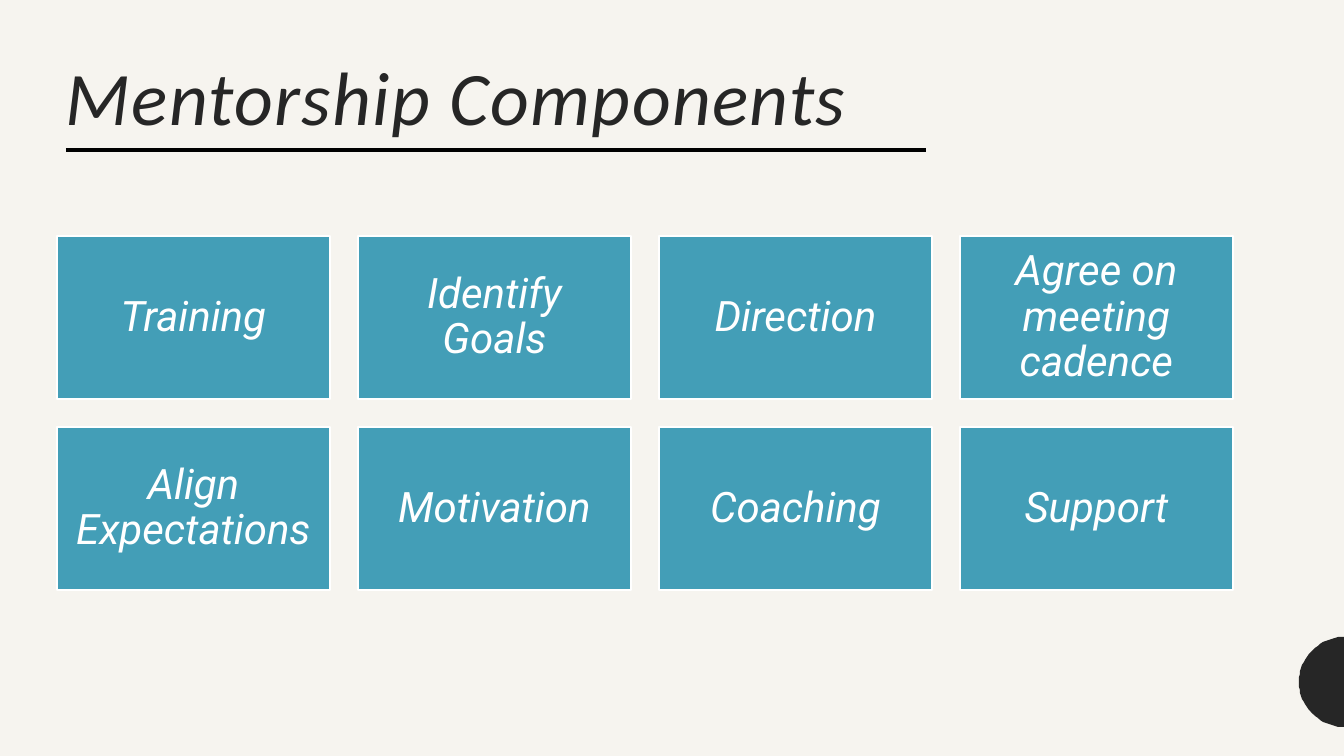
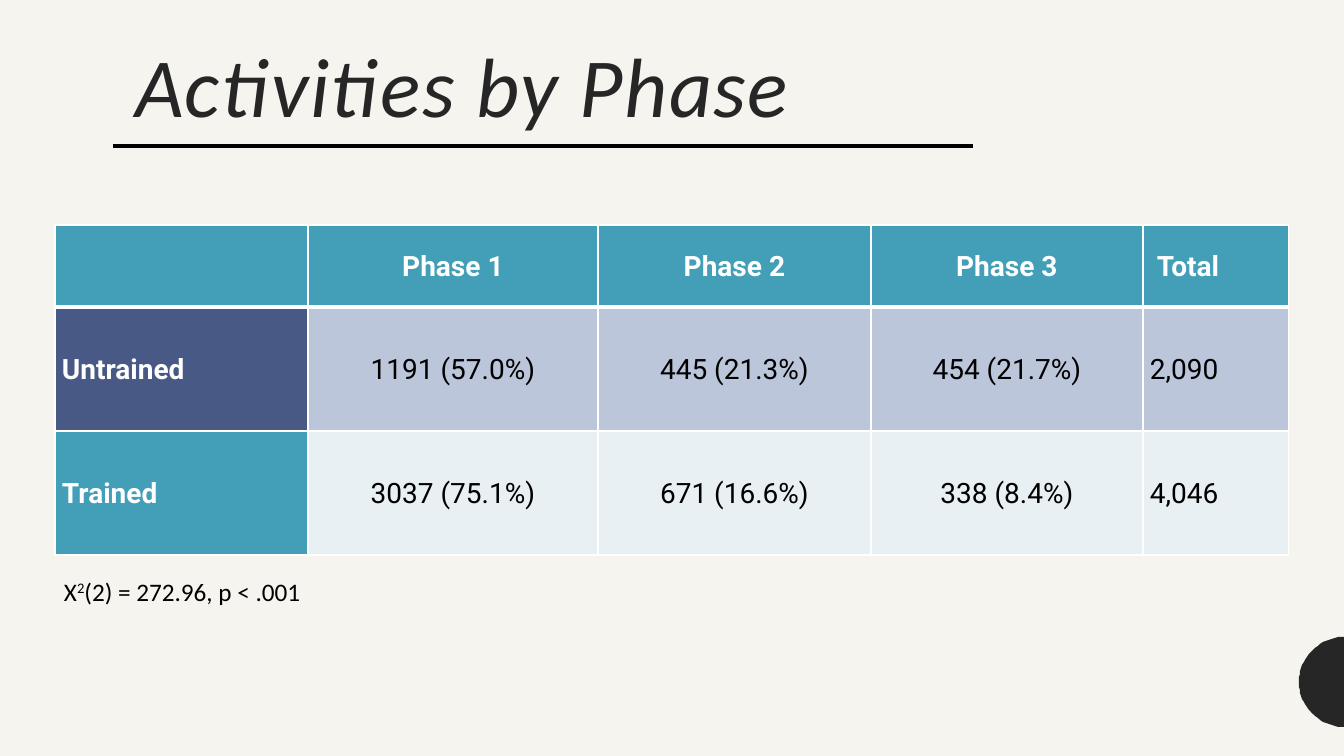
import math

from lxml import etree
from pptx import Presentation
from pptx import util as u
from pptx.dml.color import RGBColor
from pptx.enum import shapes, text
from pptx.oxml.ns import qn

PX = 914400 / 100.8
TEAL, NAVY, INK, WHITE, BLACK = "439EB7", "475984", "262626", "FFFFFF", "000000"
PALE_BLUE, PALE_TEAL, PAPER = "BCC6DB", "E9F0F3", "F6F4EF"
SIDES = ("lnL", "lnR", "lnT", "lnB")


def px(*lengths):
    return [u.Emu(round(length * PX)) for length in lengths]


def style(paragraph, size, name, color, align=text.PP_ALIGN.LEFT, spacing=0.9, bold=False, italic=False):
    paragraph.alignment = align
    paragraph.line_spacing = spacing
    for run in paragraph.runs:
        run.font.size, run.font.name = u.Pt(size), name
        run.font.bold, run.font.italic = bold, italic
        run.font.color.rgb = RGBColor.from_string(color)


presentation = Presentation()
presentation.slide_width, presentation.slide_height = px(1344, 756)
background = presentation.slide_master.background.fill
background.solid()
background.fore_color.rgb = RGBColor.from_string(PAPER)

# Shared frame: half circle, title and rule
# heading, size, title box, anchor, rule start and height
frames = [
    ("Mentorship Components", 54, (56, 56, 1176, 94), text.MSO_ANCHOR.MIDDLE, 66, 150),
    ("Activities by Phase", 60, (125, 34, 1134, 112), text.MSO_ANCHOR.BOTTOM, 113, 146),
]
RULE_WIDTH = 860
RADIUS, CENTER_Y = 45, 682
arc = [(1344 - RADIUS * math.sin(math.radians(a)), CENTER_Y - RADIUS * math.cos(math.radians(a)))
       for a in range(0, 181, 4)]

for heading, size, box, anchor, rule_left, rule_top in frames:
    slide = presentation.slides.add_slide(presentation.slide_layouts[5])
    builder = slide.shapes.build_freeform(*arc[0], scale=PX)
    builder.add_line_segments(arc[1:], close=True)
    half_circle = builder.convert_to_shape()
    half_circle.shadow.inherit = False
    half_circle.fill.solid()
    half_circle.fill.fore_color.rgb = RGBColor.from_string(INK)
    half_circle.line.fill.background()

    title = slide.shapes.title
    title.left, title.top, title.width, title.height = px(*box)
    frame = title.text_frame
    frame.text = heading
    frame.auto_size = text.MSO_AUTO_SIZE.NONE
    frame.vertical_anchor = anchor
    frame.margin_left = frame.margin_right = frame.margin_bottom = px(10)[0]
    style(frame.paragraphs[0], size, "Calibri", INK, italic=True)
    frame.paragraphs[0].runs[0]._r.get_or_add_rPr().set("spc", "100")

    rule = slide.shapes.add_connector(
        shapes.MSO_CONNECTOR.STRAIGHT, *px(rule_left, rule_top, rule_left + RULE_WIDTH, rule_top))
    rule.line.color.rgb = RGBColor.from_string(BLACK)
    rule.line.width = u.Pt(3.5)
    etree.SubElement(rule._element.spPr, qn("a:effectLst"))

components_slide, phases_slide = presentation.slides

# Component tiles, four to a row
components = ["Training", "Identify Goals", "Direction", "Agree on meeting cadence",
              "Align Expectations", "Motivation", "Coaching", "Support"]
TILE_WIDTH, TILE_HEIGHT, GAP = 273, 163, 28
for index, component in enumerate(components):
    row, column = divmod(index, 4)
    tile = components_slide.shapes.add_shape(
        shapes.MSO_SHAPE.RECTANGLE,
        *px(57 + column * (TILE_WIDTH + GAP), 236 + row * (TILE_HEIGHT + GAP), TILE_WIDTH, TILE_HEIGHT))
    tile.shadow.inherit = False
    tile.fill.solid()
    tile.fill.fore_color.rgb = RGBColor.from_string(TEAL)
    tile.line.color.rgb = RGBColor.from_string(WHITE)
    tile.line.width = u.Pt(1)
    frame = tile.text_frame
    frame.text = component
    frame.word_wrap = True
    frame.vertical_anchor = text.MSO_ANCHOR.MIDDLE
    frame.margin_left = frame.margin_right = frame.margin_top = frame.margin_bottom = px(12)[0]
    style(frame.paragraphs[0], 30, "Roboto", WHITE, text.PP_ALIGN.CENTER, italic=True)

# Phase table
rows = [
    ["", "Phase 1", "Phase 2", "Phase 3", "Total"],
    ["Untrained", "1191 (57.0%)", "445 (21.3%)", "454 (21.7%)", "2,090"],
    ["Trained", "3037 (75.1%)", "671 (16.6%)", "338 (8.4%)", "4,046"],
]
label_fills = [TEAL, NAVY, TEAL]
value_fills = [TEAL, PALE_BLUE, PALE_TEAL]
column_widths = px(253, 290, 273, 272, 146)
row_heights = px(82, 124, 124)
table = phases_slide.shapes.add_table(3, 5, *px(55, 225, 1234, 330)).table
table.first_row = table.horz_banding = False
for column, width in zip(table.columns, column_widths):
    column.width = width
for row, height in zip(table.rows, row_heights):
    row.height = height

for r, values in enumerate(rows):
    for c, value in enumerate(values):
        cell = table.cell(r, c)
        properties = cell._tc.get_or_add_tcPr()
        for side in SIDES:
            thick = (r, side) in ((0, "lnB"), (1, "lnT"))
            border = etree.SubElement(properties, qn(f"a:{side}"), w=str(u.Pt(3 if thick else 1)))
            fill = etree.SubElement(border, qn("a:solidFill"))
            etree.SubElement(fill, qn("a:srgbClr"), val=WHITE)
        cell.fill.solid()
        cell.fill.fore_color.rgb = RGBColor.from_string(value_fills[r] if c else label_fills[r])
        cell.vertical_anchor = text.MSO_ANCHOR.MIDDLE
        total_heading = r == 0 and c == 4
        cell.margin_left, cell.margin_right = px(14 if total_heading else 7, 7)
        cell.margin_top = cell.margin_bottom = 0
        cell.text = value
        paragraph = cell.text_frame.paragraphs[0]
        emphasis = r == 0 or c == 0
        align = text.PP_ALIGN.CENTER if 0 < c < 4 else text.PP_ALIGN.LEFT
        style(paragraph, 20, "Roboto", WHITE if emphasis else BLACK, align, 1.07, bold=emphasis)
        paragraph.space_after = u.Pt(8)

# Test statistic under the table
note = phases_slide.shapes.add_textbox(*px(54, 569, 672, 41))
note.text_frame.word_wrap = True
paragraph = note.text_frame.paragraphs[0]
for part in ("Χ", "2", "(2) = 272.96, p < .001"):
    paragraph.add_run().text = part
style(paragraph, 18, "Calibri", BLACK, spacing=1.07)
paragraph.space_after = u.Pt(8)
paragraph.runs[1]._r.get_or_add_rPr().set("baseline", "30000")

presentation.save("out.pptx")
